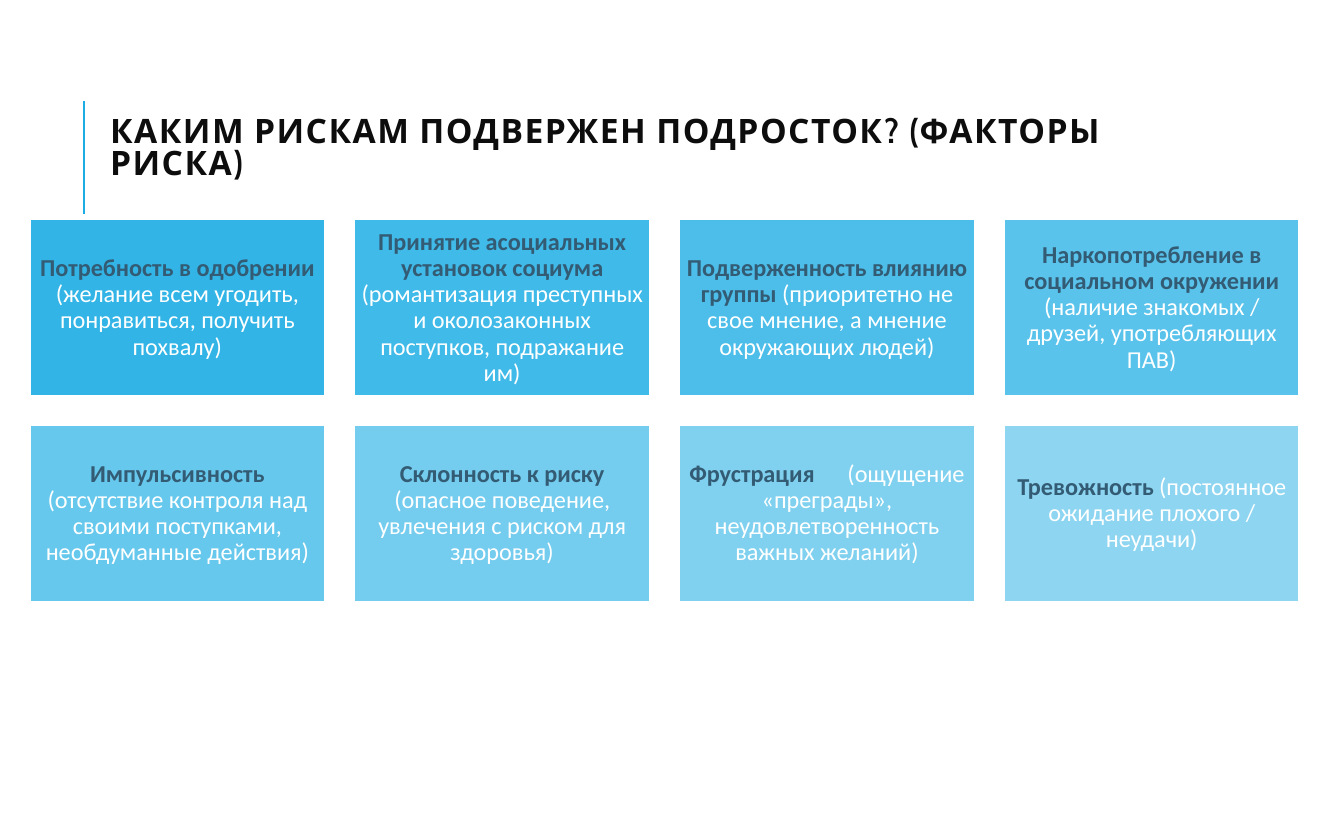
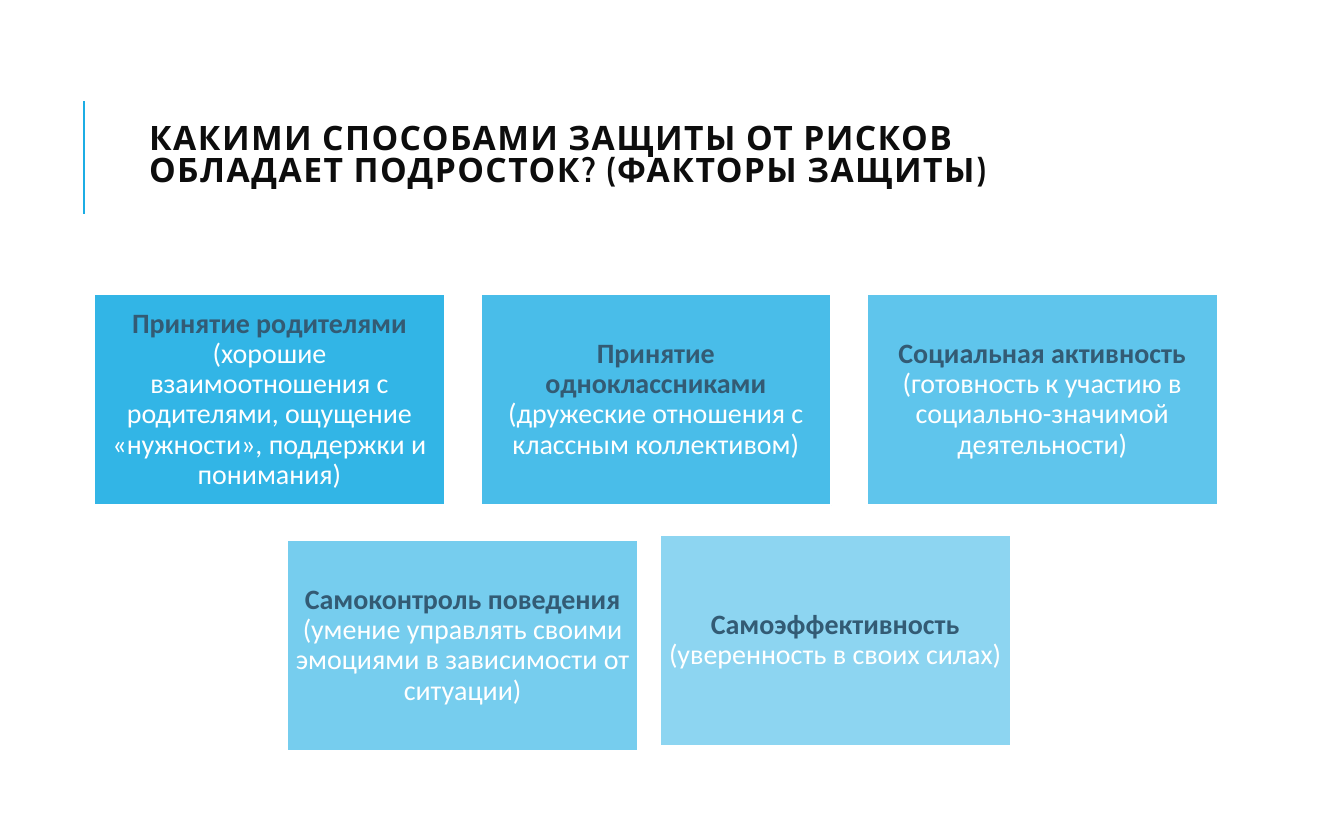
from lxml import etree
from pptx import Presentation
from pptx.dml.color import RGBColor
from pptx.enum import shapes, text
from pptx.oxml import ns
from pptx.util import Pt

ACCENT, HEADING, TITLE, WHITE = "1CADE4", "335B74", "0D0D0D", "FFFFFF"
TITLE_FONT, BODY_FONT = "Cabin", "Calibri"
OPACITY_FIRST, OPACITY_LAST = 90, 50
TITLE_ONLY = 5

RISKS = [
    ("Потребность в одобрении",
     "(желание всем угодить, понравиться, получить похвалу)"),
    ("Принятие асоциальных установок социума",
     "(романтизация преступных и околозаконных поступков, подражание им)"),
    ("Подверженность влиянию группы",
     "(приоритетно не свое мнение, а мнение окружающих людей)"),
    ("Наркопотребление в социальном окружении",
     "(наличие знакомых / друзей, употребляющих ПАВ)"),
    ("Импульсивность",
     "(отсутствие контроля над своими поступками, необдуманные действия)"),
    ("Склонность к риску",
     "(опасное поведение, увлечения с риском для здоровья)"),
    ("Фрустрация",
     "(ощущение «преграды», неудовлетворенность важных желаний)"),
    ("Тревожность",
     "(постоянное ожидание плохого / неудачи)"),
]
WIDE_GAPS = {"Фрустрация": 14.7}  # extra points between heading and detail

PROTECTIONS = [
    ("Принятие родителями",
     "(хорошие взаимоотношения с родителями, ощущение «нужности», "
     "поддержки и понимания)"),
    ("Принятие одноклассниками",
     "(дружеские отношения с классным коллективом)"),
    ("Социальная активность",
     "(готовность к участию в социально-значимой деятельности)"),
    ("Самоконтроль поведения",
     "(умение управлять своими эмоциями в зависимости от ситуации)"),
    ("Самоэффективность", "(уверенность в своих силах)"),
]


def color(hex_string):
    return RGBColor.from_string(hex_string)


def set_tracking(run, points):
    run.font._element.set("spc", str(round(points * 100)))


def set_opacity(shape, percent):
    fill_color = shape._element.spPr.find(ns.qn("a:solidFill"))[0]
    alpha = etree.SubElement(fill_color, ns.qn("a:alpha"))
    alpha.set("val", str(round(percent * 1000)))


def add_title_rule(slide):
    rule = slide.shapes.add_connector(
        shapes.MSO_CONNECTOR.STRAIGHT, Pt(45), Pt(114.5), Pt(45), Pt(54))
    rule.line.color.rgb = color(ACCENT)
    rule.line.width = Pt(1.5)
    etree.SubElement(rule._element.spPr, ns.qn("a:effectLst"))


def set_title(slide, wording, left, top, width):
    title = slide.shapes.title
    title.left, title.top = Pt(left), Pt(top)
    title.width, title.height = Pt(width), Pt(58.3)
    frame = title.text_frame
    frame.text = wording
    frame.word_wrap = True
    frame.auto_size = text.MSO_AUTO_SIZE.NONE
    frame.vertical_anchor = text.MSO_ANCHOR.MIDDLE
    paragraph = frame.paragraphs[0]
    paragraph.alignment = text.PP_ALIGN.LEFT
    paragraph.line_spacing = 0.8
    paragraph.font.name = TITLE_FONT
    paragraph.font.size = Pt(18)
    paragraph.font.bold = True
    paragraph.font.color.rgb = color(TITLE)
    set_tracking(paragraph.runs[0], 0.8)


def add_slide(deck, wording, left, top, width):
    slide = deck.slides.add_slide(deck.slide_layouts[TITLE_ONLY])
    add_title_rule(slide)
    set_title(slide, wording, left, top, width)
    return slide


def add_factor(slide, factor, position, size, font_size, inset, opacity):
    heading, detail = factor
    card = slide.shapes.add_shape(
        shapes.MSO_SHAPE.RECTANGLE, *map(Pt, position + size))
    card.shadow.inherit = False
    card.fill.solid()
    card.fill.fore_color.rgb = color(ACCENT)
    set_opacity(card, opacity)
    card.line.color.rgb = color(WHITE)
    card.line.width = Pt(1.25)

    frame = card.text_frame
    frame.word_wrap = True
    frame.vertical_anchor = text.MSO_ANCHOR.MIDDLE
    frame.margin_left = frame.margin_right = Pt(inset)
    frame.margin_top = frame.margin_bottom = Pt(inset)
    paragraph = frame.paragraphs[0]
    paragraph.alignment = text.PP_ALIGN.CENTER
    paragraph.line_spacing = 0.9
    paragraph.font.name = BODY_FONT
    paragraph.font.size = Pt(font_size)
    for wording, ink, bold in ((heading, HEADING, True), (" ", HEADING, True),
                               (detail, WHITE, False)):
        run = paragraph.add_run()
        run.text = wording
        run.font.bold = bold
        run.font.color.rgb = color(ink)
        if wording == " " and heading in WIDE_GAPS:
            set_tracking(run, WIDE_GAPS[heading])


def grid(count, columns, origin, pitch):
    """Return card positions row by row, with a short last row centred."""
    positions = []
    for index in range(count):
        row, column = divmod(index, columns)
        in_row = min(columns, count - row * columns)
        indent = (columns - in_row) / 2
        positions.append((origin[0] + (column + indent) * pitch[0],
                          origin[1] + row * pitch[1]))
    return positions


def add_factors(slide, factors, positions, size, font_size, inset):
    step = (OPACITY_LAST - OPACITY_FIRST) / (len(factors) - 1)
    for index, (factor, position) in enumerate(zip(factors, positions)):
        add_factor(slide, factor, position, size, font_size, inset,
                   OPACITY_FIRST + index * step)


def main():
    deck = Presentation()
    deck.slide_width, deck.slide_height = Pt(720), Pt(450)

    risks = add_slide(
        deck, "КАКИМ РИСКАМ ПОДВЕРЖЕН ПОДРОСТОК? (ФАКТОРЫ РИСКА)",
        left=51.8, top=51.1, width=561.6)
    risk_positions = grid(len(RISKS), 4, (15.8, 117.4), (174, 110.3))
    add_factors(risks, RISKS, risk_positions, (158.4, 95), 13, 3.6)

    protections = add_slide(
        deck,
        "КАКИМИ СПОСОБАМИ ЗАЩИТЫ ОТ РИСКОВ ОБЛАДАЕТ ПОДРОСТОК? "
        "(ФАКТОРЫ ЗАЩИТЫ)",
        left=72.7, top=54.7, width=492.5)
    protection_positions = grid(
        len(PROTECTIONS), 3, (50.4, 157.7), (207, 131.7))
    protection_positions[-1] = (353.5, 286.6)  # sits slightly off the grid
    add_factors(protections, PROTECTIONS, protection_positions,
                (188, 113), 15, 4.2)

    deck.save("out.pptx")


if __name__ == "__main__":
    main()
